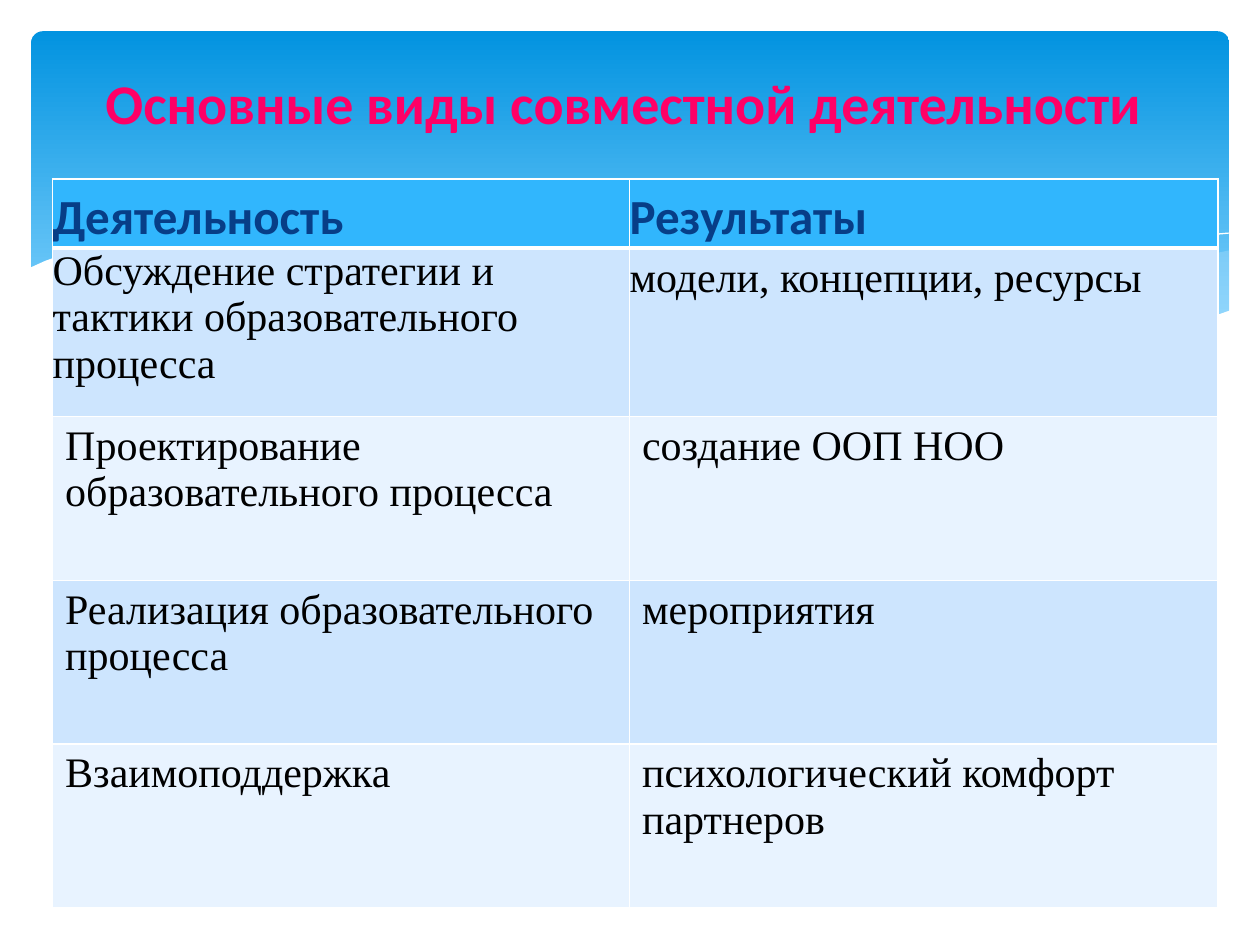
from dataclasses import dataclass

from pptx import Presentation
from pptx.dml.color import RGBColor
from pptx.enum.shapes import MSO_SHAPE as Kind
from pptx.enum.text import MSO_ANCHOR as Anchor, PP_ALIGN as Align
from pptx.oxml import parse_xml
from pptx.oxml.ns import nsdecls
from pptx.util import Cm, Pt


@dataclass(frozen=True)
class Theme:
    """Colours, fonts and type sizes of the slide."""
    white: str = "FFFFFF"
    black: str = "000000"
    pink: str = "FF0066"
    navy: str = "073E87"
    top: str = "0293E0"
    foot: str = "83D3FE"
    mist: str = "C6E7FC"
    header: str = "31B6FD"
    bands: tuple = ("CDE5FE", "E8F3FF")
    sans: str = "Calibri"
    serif: str = "Times New Roman"
    title: int = 32
    head: int = 28
    body: int = 24


THEME = Theme()

RIGHT = [(24.77, 5.05), (23.06, 5.41), (22.25, 5.58), (21.13, 5.84), (19.79, 6.15),
         (18.52, 6.43), (16.79, 6.73), (17.91, 6.88), (19.23, 7.01), (20.4, 7.06),
         (21.69, 7.01), (22.78, 6.83), (23.75, 6.58), (24.79, 6.27), (24.79, 5.05)]
MIDDLE = [(22.68, 6.93), (20.5, 6.6), (18.82, 6.3), (16.97, 5.87), (15.57, 5.54),
          (14.1, 5.21), (12.73, 4.98), (11.23, 4.8), (9.65, 4.72), (8.33, 4.75),
          (7.26, 4.85), (8.69, 5.05), (10.26, 5.36), (12.47, 5.89), (14.38, 6.3),
          (16.1, 6.63), (18.01, 6.91), (19.94, 7.06), (21.29, 7.06)]
CREST = [(7.85, 4.95), (8.97, 4.8), (10.57, 4.75), (12.42, 4.83), (14.12, 5),
         (16.15, 5.28), (18.47, 5.74), (21.11, 6.38), (23.04, 6.91)]
RISE = [(15.57, 6.53), (17.65, 5.97), (19.71, 5.49), (21.23, 5.18), (22.73, 4.93),
        (23.83, 4.78), (24.77, 4.7)]
FRONT = [(24.82, 6.25), (23.88, 6.58), (22.83, 6.83), (21.59, 6.99), (20.14, 7.04),
         (18.44, 6.96), (16.43, 6.65), (14.1, 6.22), (12.07, 5.76), (9.93, 5.26),
         (8, 4.93), (6.35, 4.72), (4.9, 4.67), (3.35, 4.72), (2.41, 4.85),
         (1.5, 5.05), (0.91, 5.26), (0.58, 5.41), (0.58, 8.36), (24.82, 8.36)]

ROWS = [
    ("Деятельность", "Результаты"),
    ("Обсуждение стратегии и тактики образовательного процесса",
     "модели, концепции, ресурсы"),
    ("Проектирование образовательного процесса", "создание ООП НОО"),
    ("Реализация образовательного процесса", "мероприятия"),
    ("Взаимоподдержка", "психологический комфорт партнеров"),
]
COLS = (11.63, 11.86)
TALL = (1.37, 3.4, 3.3, 3.3, 3.3)


def rgb(code):
    """Turn a hex code into a colour."""
    return RGBColor.from_string(code)


def paint(fill, code):
    """Give a solid fill."""
    fill.solid()
    fill.fore_color.rgb = rgb(code)


def style(par, face, size, code, bold=False):
    """Format the runs of a paragraph."""
    for run in par.runs:
        run.font.name = face
        run.font.size = Pt(size)
        run.font.bold = bold
        run.font.color.rgb = rgb(code)


def add_panel(slide):
    """Add the rounded panel with its gradient."""
    panel = slide.shapes.add_shape(Kind.ROUNDED_RECTANGLE, Cm(0.63), Cm(0.63), Cm(24.15), Cm(6.86))
    panel.adjustments[0] = 0.034
    panel.shadow.inherit = False
    panel.line.fill.background()
    panel.fill.gradient()
    panel.fill.gradient_angle = 270
    stops = panel.fill.gradient_stops
    for stop, code, place in zip(stops, (THEME.top, THEME.foot), (0, 0.9)):
        stop.color.rgb = rgb(code)
        stop.position = place


def add_wave(slide, points, code=None, alpha=100):
    """Add a filled wave, or a thin open curve when no colour is given."""
    spots = [(Cm(x), Cm(y)) for x, y in points]
    pen = slide.shapes.build_freeform(*spots[0])
    pen.add_line_segments(spots[1:], close=code is not None)
    wave = pen.convert_to_shape()
    wave.shadow.inherit = False
    if code is None:
        wave.fill.background()
        wave.line.color.rgb = rgb(THEME.white)
        wave.line.width = Pt(0)
        return
    wave.line.fill.background()
    paint(wave.fill, code)
    if alpha < 100:
        tint = wave.fill._xPr.find(".//{*}srgbClr")
        tint.append(parse_xml(f'<a:alpha {nsdecls("a")} val="{alpha * 1000}"/>'))


def add_edges(cell, top, foot):
    """Draw the white borders of a cell."""
    props = cell._tc.get_or_add_tcPr()
    for spot, (side, width) in enumerate((("L", 1), ("R", 1), ("T", top), ("B", foot))):
        props.insert(spot, parse_xml(
            f'<a:ln{side} {nsdecls("a")} w="{Pt(width)}"><a:solidFill>'
            f'<a:srgbClr val="{THEME.white}"/></a:solidFill></a:ln{side}>'))


def fill_cell(cell, text, row, col):
    """Write and format one cell."""
    cell.text = text
    par = cell.text_frame.paragraphs[0]
    paint(cell.fill, THEME.bands[(row - 1) % 2] if row else THEME.header)
    add_edges(cell, 3 if row == 1 else 1, 1 if row else 3)
    if row:
        style(par, THEME.serif, THEME.body, THEME.black)
    else:
        style(par, THEME.sans, THEME.head, THEME.navy, True)
    if row < 2:
        cell.margin_left = cell.margin_right = cell.margin_top = cell.margin_bottom = 0
    if row == 0 or (row, col) == (1, 1):
        par.line_spacing = 1.15
        par.space_before = par.space_after = Pt(9)


def add_grid(slide):
    """Add the table of activities and results."""
    frame = slide.shapes.add_table(len(ROWS), len(COLS), Cm(1.06), Cm(3.61),
                                   Cm(sum(COLS)), Cm(sum(TALL)))
    grid = frame.table
    for col, width in enumerate(COLS):
        grid.columns[col].width = Cm(width)
    for row, texts in enumerate(ROWS):
        grid.rows[row].height = Cm(TALL[row])
        for col, text in enumerate(texts):
            fill_cell(grid.cell(row, col), text, row, col)


def set_title(slide, text):
    """Place and format the title in front of the panel."""
    title = slide.shapes.title
    title.left, title.top, title.width, title.height = Cm(1.27), Cm(0.94), Cm(22.86), Cm(2.24)
    title.text_frame.text = text
    title.text_frame.vertical_anchor = Anchor.MIDDLE
    par = title.text_frame.paragraphs[0]
    par.alignment = Align.CENTER
    style(par, THEME.sans, THEME.title, THEME.pink, True)
    slide.shapes._spTree.append(title._element)


def main():
    """Build and save the slide."""
    deck = Presentation()
    deck.slide_width, deck.slide_height = Cm(25.4), Cm(19.05)
    slide = deck.slides.add_slide(deck.slide_layouts[5])
    add_panel(slide)
    add_wave(slide, RIGHT, THEME.mist, 29)
    add_wave(slide, MIDDLE, THEME.mist, 40)
    add_wave(slide, CREST)
    add_wave(slide, RISE)
    add_wave(slide, FRONT, THEME.white)
    add_grid(slide)
    set_title(slide, "Основные виды совместной деятельности ")
    deck.save("out.pptx")


if __name__ == "__main__":
    main()
